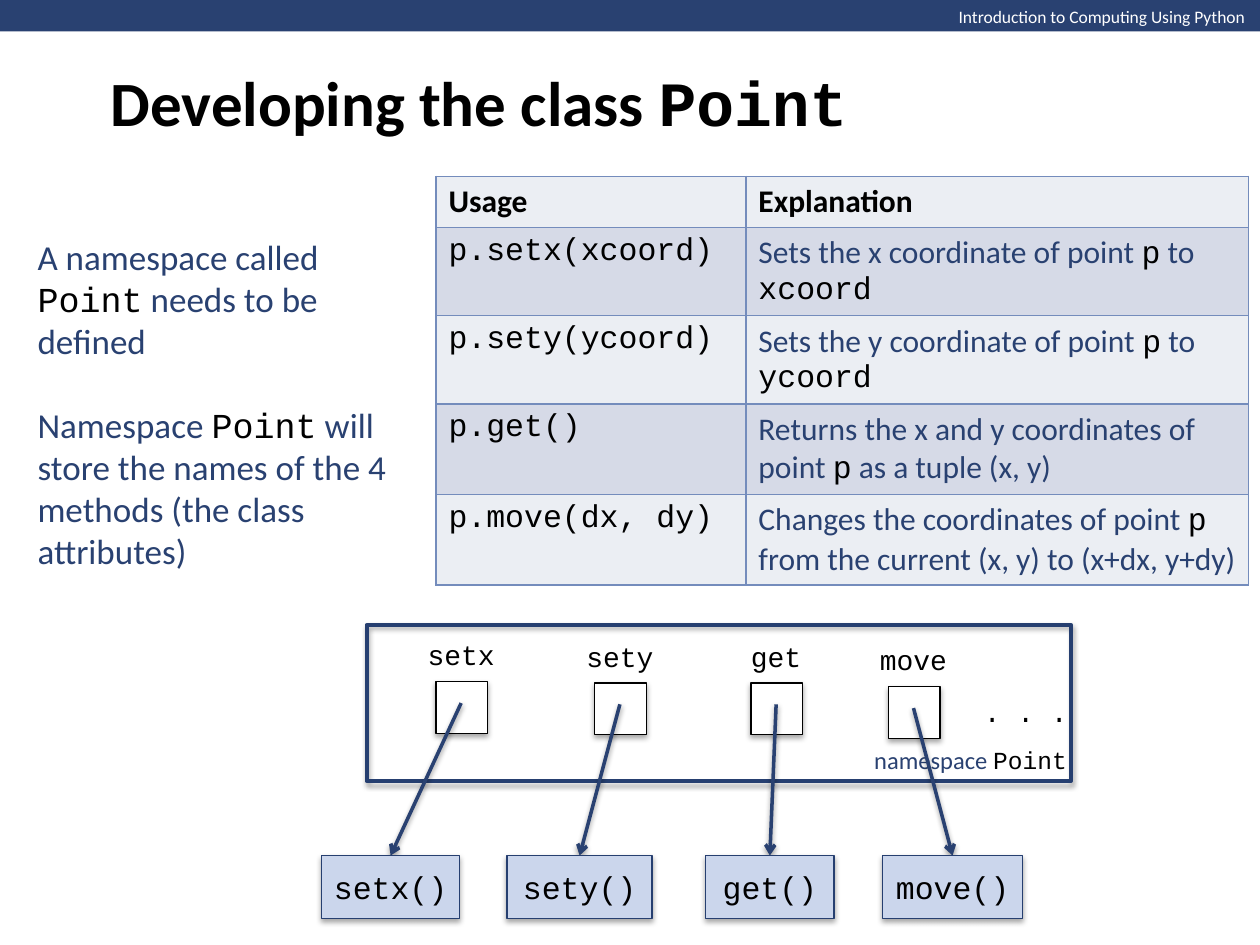
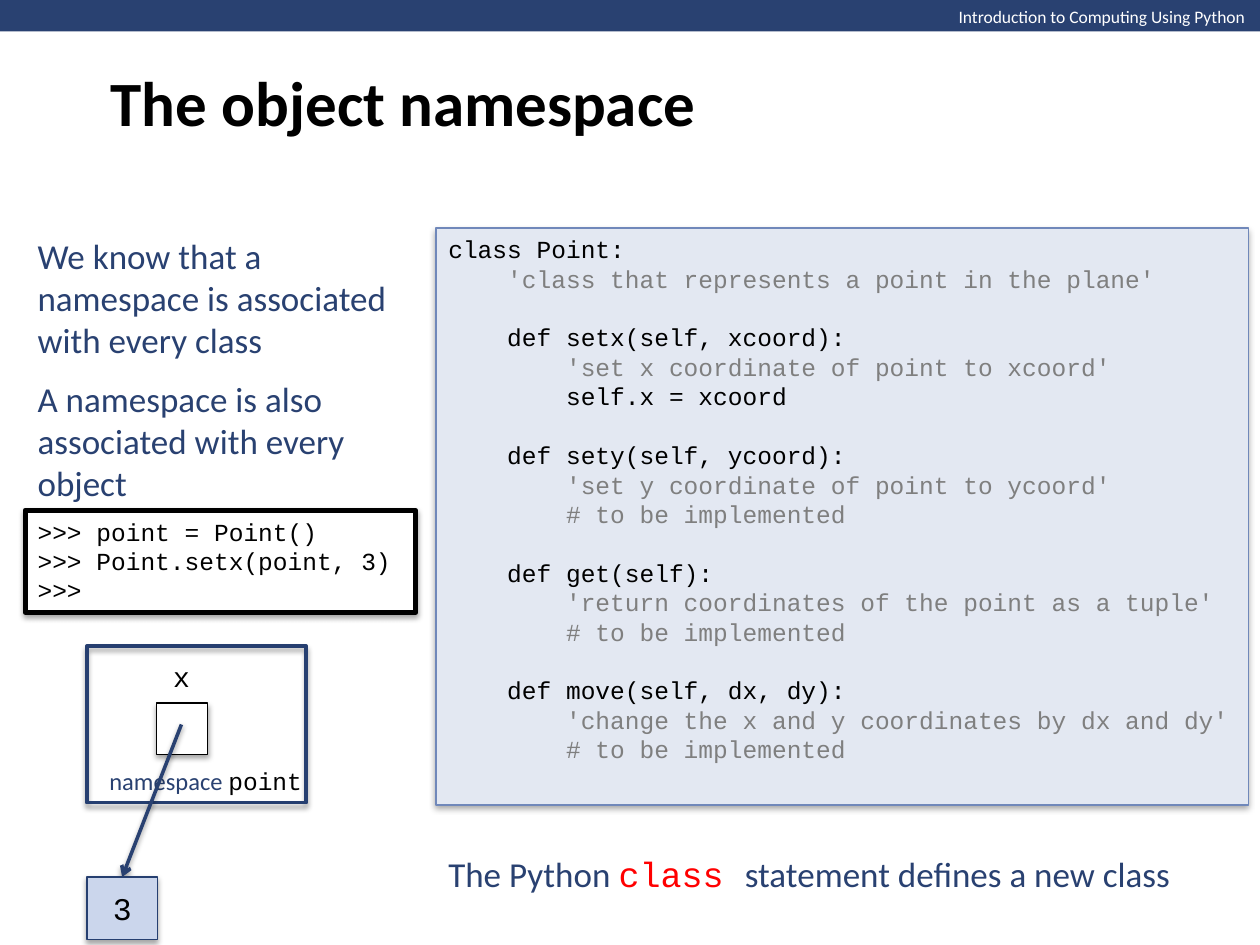
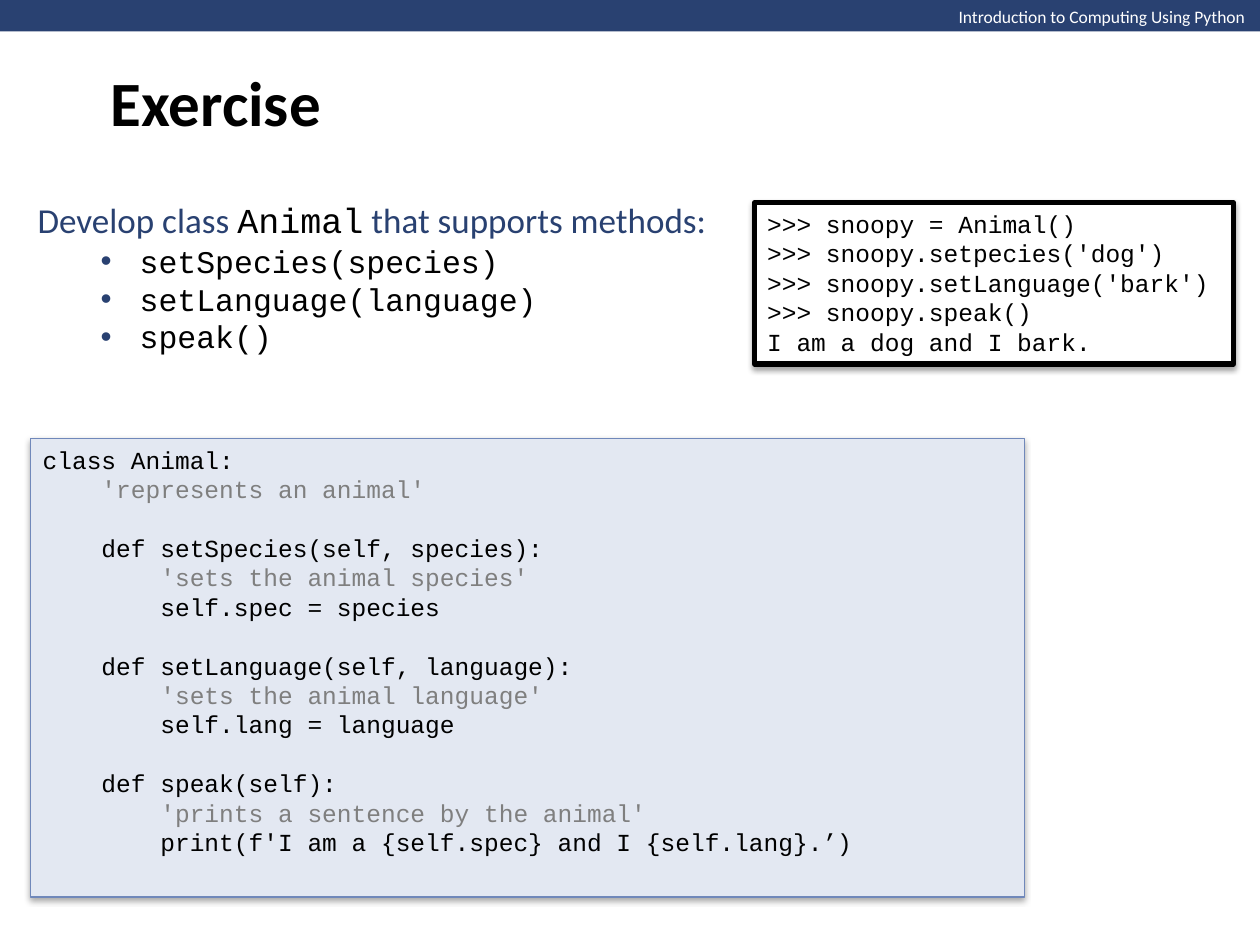
import pptx
import pptx.util
import pptx.dml.color
import pptx.enum.shapes
import pptx.enum.text
import pptx.oxml
from pptx.util import Inches

COLORS = {
    "navy": "294171", "frame": "263F70", "value": "CBD6EC", "panel": "E3E8F2",
    "panel_edge": "7088BA", "grid": "748CBC", "light_row": "EBEEF3", "dark_row": "D6DAE7",
    "black": "000000", "white": "FFFFFF", "gray": "7F7F7F", "red": "FF0000",
}
RGB = {name: pptx.dml.color.RGBColor.from_string(code) for name, code in COLORS.items()}
NS = 'xmlns:a="http://schemas.openxmlformats.org/drawingml/2006/main"'
LEFT, CENTER = pptx.enum.text.PP_ALIGN.LEFT, pptx.enum.text.PP_ALIGN.CENTER
TOP, MIDDLE = pptx.enum.text.MSO_ANCHOR.TOP, pptx.enum.text.MSO_ANCHOR.MIDDLE


def write(frame, lines, size, color="navy", align=LEFT, anchor=MIDDLE, wrap=True):
    frame.word_wrap = wrap
    frame.auto_size = pptx.enum.text.MSO_AUTO_SIZE.NONE
    frame.vertical_anchor = anchor
    for number, line in enumerate(lines):
        paragraph = frame.paragraphs[0] if number == 0 else frame.add_paragraph()
        paragraph.alignment = align
        pieces = line.split("`")
        all_code = len(pieces) == 3 and not pieces[0] and not pieces[2]
        paragraph.font.size = pptx.util.Pt(size)
        paragraph.font.name = "Courier New" if all_code else "Calibri"
        paragraph.font.color.rgb = RGB["black" if all_code else color]
        for position, piece in enumerate(pieces):
            if piece:
                run = paragraph.add_run()
                run.text = piece
                if position % 2 and not all_code:
                    run.font.name = "Courier New"
                    run.font.color.rgb = RGB["black"]


def draw_box(slide, left, top, width, height, fill, line, weight):
    box = slide.shapes.add_shape(
        pptx.enum.shapes.MSO_SHAPE.RECTANGLE,
        Inches(left), Inches(top), Inches(width), Inches(height))
    if fill:
        box.fill.solid()
        box.fill.fore_color.rgb = RGB[fill]
    else:
        box.fill.background()
    box.line.color.rgb = RGB[line]
    box.line.width = pptx.util.Pt(weight)
    return box


deck = pptx.Presentation()
deck.slide_width, deck.slide_height = Inches(10), Inches(7.5)

for heading in ["Developing the class `Point`", "The object namespace", "Exercise"]:
    slide = deck.slides.add_slide(deck.slide_layouts[5])
    title = slide.shapes.title
    title.left, title.top = Inches(0.78), Inches(0)
    title.width, title.height = Inches(8.72), Inches(1.61)
    write(title.text_frame, [heading], 36, "black")
    title.text_frame.paragraphs[0].font.bold = True
    band = draw_box(slide, 0, 0, 10, 0.25, "navy", "navy", 0.75)
    band.line.fill.background()
    band.shadow.inherit = False
    course = slide.shapes.add_textbox(Inches(7.51), Inches(0), Inches(2.5), Inches(0.27))
    write(course.text_frame, ["Introduction to Computing Using Python"], 10, "white",
          anchor=TOP, wrap=False)

class_slide, object_slide, exercise_slide = deck.slides

usage_rows = [
    ("Usage", "Explanation"),
    ("`p.setx(xcoord)`", "Sets the x coordinate of point `p` to `xcoord`"),
    ("`p.sety(ycoord)`", "Sets the y coordinate of point `p` to `ycoord`"),
    ("`p.get()`", "Returns the x and y coordinates of point `p` as a tuple (x, y)"),
    ("`p.move(dx, dy)`",
     "Changes the coordinates of point `p` from the current (x, y) to (x+dx, y+dy)"),
]
usage = class_slide.shapes.add_table(
    len(usage_rows), 2, Inches(3.46), Inches(1.4), Inches(6.45), Inches(3.2)).table
usage.columns[0].width, usage.columns[1].width = Inches(2.46), Inches(3.99)
for r, row in enumerate(usage_rows):
    usage.rows[r].height = Inches(0.7 if r else 0.4)
    for c, entry in enumerate(row):
        cell = usage.cell(r, c)
        for side in ["lnL", "lnR", "lnT", "lnB"]:
            cell._tc.get_or_add_tcPr().append(pptx.oxml.parse_xml(
                f'<a:{side} {NS} w="12700"><a:solidFill><a:srgbClr val="{COLORS["grid"]}"/>'
                f'</a:solidFill></a:{side}>'))
        cell.fill.solid()
        cell.fill.fore_color.rgb = RGB["dark_row" if r % 2 else "light_row"]
        write(cell.text_frame, [entry], 18, "navy" if r else "black", anchor=TOP)
        cell.text_frame.paragraphs[0].font.bold = r == 0

namespaces = [
    (class_slide, "Point", 2.91, 4.96, 5.59, [
        ("setx", 3.46, 0.45, "setx()", 3.1, 1.1),
        ("sety", 4.72, 0.46, "sety()", 4.6, 1.15),
        ("get", 5.96, 0.46, "get()", 6.11, 1.02),
        ("move", 7.05, 0.49, "move()", 7.56, 1.11)]),
    (object_slide, "point", 0.69, 5.13, 1.74, [("x", 1.24, 0.45, "3", 0.97, 0.56)]),
]
for slide, owner, left, top, width, names in namespaces:
    draw_box(slide, left, top, width, 1.24, None, "frame", 2.25)
    caption = slide.shapes.add_textbox(
        Inches(left + width - 1.66), Inches(top + 0.9), Inches(1.74), Inches(0.34))
    write(caption.text_frame, [f"namespace `{owner}`"], 14, wrap=False)
    value_top = top + 1.83
    for name, slot_left, drop, value, value_center, value_width in names:
        slot_top = top + drop
        draw_box(slide, slot_left, slot_top, 0.41, 0.41, "white", "black", 0.75)
        label = slide.shapes.add_textbox(
            Inches(slot_left - 0.3), Inches(slot_top - 0.4), Inches(1), Inches(0.37))
        write(label.text_frame, [f"`{name}`"], 16, align=CENTER)
        arrow = slide.shapes.add_connector(
            pptx.enum.shapes.MSO_CONNECTOR.STRAIGHT,
            Inches(slot_left + 0.2), Inches(slot_top + 0.17),
            Inches(value_center), Inches(value_top))
        arrow.line.color.rgb = RGB["navy"]
        arrow.line.width = pptx.util.Pt(2)
        arrow.line._get_or_add_ln().append(
            pptx.oxml.parse_xml(f'<a:tailEnd {NS} type="arrow"/>'))
        target = draw_box(slide, value_center - value_width / 2, value_top, value_width, 0.5,
                          "value", "frame", 0.75)
        write(target.text_frame, [f"`{value}`"], 18, align=CENTER, wrap=False)

passages = [
    (class_slide, 0.2, 1.81, 3.1, 2.79, [
        "A namespace called `Point` needs to be defined",
        "Namespace `Point` will store the names of the 4 methods (the class attributes)"]),
    (object_slide, 0.2, 1.81, 3.26, 1.11,
     ["We know that a namespace is associated with every class"]),
    (object_slide, 0.2, 2.94, 3.26, 1.11,
     ["A namespace is also associated with every object"]),
    (object_slide, 3.46, 6.71, 6.2, 0.44,
     ["The Python `class `statement defines a new class"]),
    (exercise_slide, 0.2, 1.52, 5.79, 0.44,
     ["Develop class `Animal` that supports methods:"]),
]
for slide, left, top, width, height, lines in passages:
    passage = slide.shapes.add_textbox(Inches(left), Inches(top), Inches(width), Inches(height))
    write(passage.text_frame, lines, 20)
    for paragraph in passage.text_frame.paragraphs[1:]:
        paragraph.space_before = pptx.util.Pt(24)
    for run in passage.text_frame.paragraphs[0].runs:
        if run.text == "class ":
            run.font.color.rgb = RGB["red"]

more_names = class_slide.shapes.add_textbox(
    Inches(7.71), Inches(5.46), Inches(0.88), Inches(0.37))
write(more_names.text_frame, ["`. . .`"], 16, wrap=False)

methods = exercise_slide.shapes.add_textbox(
    Inches(0.2), Inches(1.87), Inches(5.79), Inches(1))
write(methods.text_frame,
      ["`setSpecies(species)`", "`setLanguage(language)`", "`speak()`"], 18, anchor=TOP)
for paragraph in methods.text_frame.paragraphs:
    properties = paragraph._p.get_or_add_pPr()
    properties.set("marL", str(Inches(0.81)))
    properties.set("indent", str(Inches(-0.31)))
    bullet_parts = [
        f'<a:buClr {NS}><a:srgbClr val="{COLORS["navy"]}"/></a:buClr>',
        f'<a:buFont {NS} typeface="Arial"/>',
        f'<a:buChar {NS} char="•"/>',
    ]
    for position, part in enumerate(bullet_parts):
        properties.insert(position, pptx.oxml.parse_xml(part))

point_class = """class Point:
    'class that represents a point in the plane'
    def setx(self, xcoord):
        'set x coordinate of point to xcoord'
        self.x = xcoord
    def sety(self, ycoord):
        'set y coordinate of point to ycoord'
        # to be implemented
    def get(self):
        'return coordinates of the point as a tuple'
        # to be implemented
    def move(self, dx, dy):
        'change the x and y coordinates by dx and dy'
        # to be implemented"""
point_session = """>>> point = Point()
>>> Point.setx(point, 3)
>>>"""
animal_class = """class Animal:
    'represents an animal'
    def setSpecies(self, species):
        'sets the animal species'
        self.spec = species
    def setLanguage(self, language):
        'sets the animal language'
        self.lang = language
    def speak(self):
        'prints a sentence by the animal'
        print(f'I am a {self.spec} and I {self.lang}.’)"""
animal_session = """>>> snoopy = Animal()
>>> snoopy.setpecies('dog')
>>> snoopy.setLanguage('bark')
>>> snoopy.speak()
I am a dog and I bark."""

editor = ("panel", "panel_edge", 0.75)
shell = ("white", "black", 3)
listings = [
    (object_slide, (3.46, 1.81, 6.45, 4.58), editor, point_class),
    (object_slide, (0.2, 4.05, 3.1, 0.81), shell, point_session),
    (exercise_slide, (0.24, 3.48, 7.89, 3.64), editor, animal_class),
    (exercise_slide, (5.99, 1.61, 3.8, 1.28), shell, animal_session),
]
for slide, place, look, code in listings:
    listing = draw_box(slide, *place, *look)
    lines = code.split("\n")
    write(listing.text_frame, [f"`{line}`" for line in lines], 14, anchor=TOP)
    for line, paragraph in zip(lines, listing.text_frame.paragraphs):
        if line.strip().startswith(("'", "#")):
            paragraph.font.color.rgb = RGB["gray"]
        if line.startswith("    def"):
            paragraph.space_before = pptx.util.Pt(16.8)

deck.save("out.pptx")
